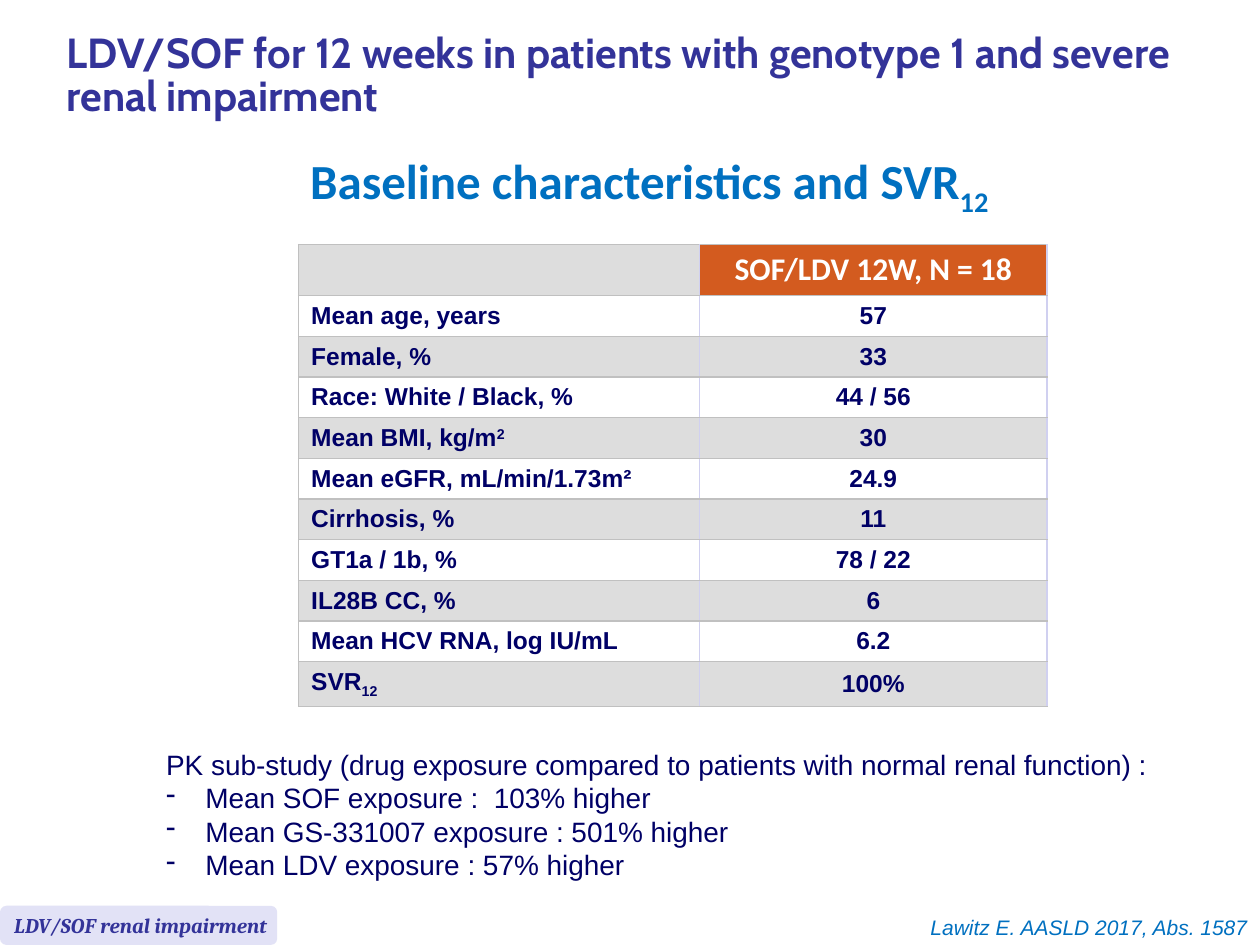
"""Build a slide of baseline characteristics and SVR12 in renal impairment."""
from dataclasses import dataclass, field

import pptx
import pptx.dml.color
import pptx.enum.shapes
import pptx.enum.text
import pptx.oxml
import pptx.oxml.ns
import pptx.util
from pptx.util import Cm

ALIGN = pptx.enum.text.PP_ALIGN
ANCHOR = pptx.enum.text.MSO_ANCHOR
AUTO_SIZE = pptx.enum.text.MSO_AUTO_SIZE
INDENT = Cm(0.79)
NAVY, INDIGO, BLUE = "000066", "333399", "0070C0"
WHITE, GREY, ORANGE, LILAC = "FFFFFF", "DDDDDD", "D35B1F", "E2E2F6"
RULE, SIDE_RULE = "C0C0C0", "D0D0F0"


@dataclass
class Style:
    """Hold the look of a run of text and of its paragraph."""
    size: float
    name: str
    color: str
    font: dict = field(default_factory=dict)
    paragraph: dict = field(default_factory=dict)


@dataclass
class Line:
    """Hold one paragraph, with an optional shifted ending or dash."""
    text: str
    ending: str = ""
    baseline: int = 0
    dashed: bool = False


@dataclass
class TextBox:
    """Hold the place, look and wording of one text box."""
    left: float
    top: float
    width: float
    height: float
    style: Style
    lines: list[Line]


BOLD, ITALIC = {"bold": True}, {"italic": True}
LEFT, CENTER = {"alignment": ALIGN.LEFT}, {"alignment": ALIGN.CENTER}
TITLE = Style(24, "Cabin", INDIGO, BOLD, LEFT | {"line_spacing": 0.85})
HEADING = Style(28, "Calibri", BLUE, BOLD, CENTER | {"line_spacing": pptx.util.Pt(15.2)})
CITATION = Style(12, "Arial", BLUE, ITALIC, {"alignment": ALIGN.RIGHT})
BODY = Style(16, "Arial", NAVY, {}, LEFT)
TAG = Style(12, "Cambria", INDIGO, BOLD | ITALIC, LEFT)
COLUMN_HEAD = Style(18, "Calibri", WHITE, BOLD, CENTER)
LABEL = Style(14, "Arial", NAVY, BOLD, LEFT)
VALUE = Style(14, "Arial", NAVY, BOLD, CENTER)

TEXT_BOXES = [
    TextBox(1.09, 3.73, 24, 0.91, HEADING,
            [Line("Baseline characteristics and SVR", "12", -25)]),
    TextBox(6.71, 18.31, 18.69, 0.76, CITATION,
            [Line("Lawitz E. AASLD 2017, Abs. 1587")]),
    TextBox(3.1, 14.94, 20.8, 3, BODY, [
        Line("PK sub-study (drug exposure compared to patients with normal renal function) :"),
        Line("Mean SOF exposure :  103% higher", dashed=True),
        Line("Mean GS-331007 exposure : 501% higher", dashed=True),
        Line("Mean LDV exposure : 57% higher", dashed=True),
    ]),
]

CHARACTERISTICS = [
    (Line("Mean age, years"), "57"),
    (Line("Female, %"), "33"),
    (Line("Race: White / Black, %"), "44 / 56"),
    (Line("Mean BMI, kg/m", "2", 30), "30"),
    (Line("Mean eGFR, mL/min/1.73m²"), "24.9"),
    (Line("Cirrhosis, %"), "11"),
    (Line("GT1a / 1b, %"), "78 / 22"),
    (Line("IL28B CC, %"), "6"),
    (Line("Mean HCV RNA, log IU/mL"), "6.2"),
    (Line("SVR", "12", -25), "100%"),
]


def rgb(color: str) -> pptx.dml.color.RGBColor:
    """Turn a hex string into a colour."""
    return pptx.dml.color.RGBColor.from_string(color)


def paint(target, color: str) -> None:
    """Fill a shape or a cell with one colour."""
    target.fill.solid()
    target.fill.fore_color.rgb = rgb(color)


def assign(target, values: dict) -> None:
    """Set attributes from a dict of format values."""
    for name, value in values.items():
        setattr(target, name, value)


def add_span(para, text: str, style: Style, baseline: int = 0) -> None:
    """Add a styled run, raised or lowered by a percentage."""
    span = para.add_run()
    span.text = text
    assign(span.font, {"size": pptx.util.Pt(style.size), "name": style.name} | style.font)
    span.font.color.rgb = rgb(style.color)
    if baseline:
        span._r.get_or_add_rPr().set("baseline", str(baseline * 1000))


def add_dash(para) -> None:
    """Give a paragraph a hanging dash."""
    properties = para._p.get_or_add_pPr()
    properties.set("marL", str(INDENT))
    properties.set("indent", str(-INDENT))
    bullet = pptx.oxml.parse_xml(f'<a:buChar {pptx.oxml.ns.nsdecls("a")} char="-"/>')
    properties.append(bullet)


def write(frame, lines: list[Line], style: Style) -> None:
    """Write styled paragraphs into a text frame."""
    for index, line in enumerate(lines):
        para = frame.add_paragraph() if index else frame.paragraphs[0]
        if line.dashed:
            add_dash(para)
        assign(para, style.paragraph)
        add_span(para, line.text, style)
        if line.ending:
            add_span(para, line.ending, style, line.baseline)


def add_text_box(page, item: TextBox) -> None:
    """Draw a wrapping text box that fits its text."""
    box = page.shapes.add_textbox(
        Cm(item.left), Cm(item.top), Cm(item.width), Cm(item.height))
    assign(box.text_frame, {"word_wrap": True, "auto_size": AUTO_SIZE.SHAPE_TO_FIT_TEXT})
    write(box.text_frame, item.lines, item.style)


def set_borders(cell, left_color: str) -> None:
    """Draw thin rules on the four sides of a cell."""
    properties = cell._tc.get_or_add_tcPr()
    sides = {"lnL": left_color, "lnR": SIDE_RULE, "lnT": RULE, "lnB": RULE}
    for index, (side, color) in enumerate(sides.items()):
        properties.insert(index, pptx.oxml.parse_xml(
            f'<a:{side} {pptx.oxml.ns.nsdecls("a")} w="12700"><a:solidFill>'
            f'<a:srgbClr val="{color}"/></a:solidFill></a:{side}>'))


def add_characteristics(page) -> None:
    """Draw the table of baseline characteristics."""
    heights = [1.03] + [0.82] * 9 + [0.9]
    frame = page.shapes.add_table(
        len(heights), 2, Cm(6.02), Cm(4.93), Cm(15.09), Cm(sum(heights)))
    table = frame.table
    for column, width in zip(table.columns, (8.08, 7.01)):
        column.width = Cm(width)
    rows = [(None, Line("SOF/LDV 12W, N = 18"))]
    rows += [(label, Line(value)) for label, value in CHARACTERISTICS]
    for row, (height, lines) in enumerate(zip(heights, rows)):
        table.rows[row].height = Cm(height)
        for column, line in enumerate(lines):
            cell = table.cell(row, column)
            cell.vertical_anchor = ANCHOR.MIDDLE
            is_head = row == 0 and column == 1
            paint(cell, ORANGE if is_head else (GREY, WHITE)[row % 2])
            set_borders(cell, SIDE_RULE if column else RULE)
            if line:
                style = COLUMN_HEAD if is_head else (LABEL, VALUE)[column]
                write(cell.text_frame, [line], style)


def add_tag(page) -> None:
    """Draw the rounded study tag in the bottom corner."""
    tag = page.shapes.add_shape(
        pptx.enum.shapes.MSO_SHAPE.ROUNDED_RECTANGLE, 0, Cm(18.26), Cm(5.59), Cm(0.79))
    tag.shadow.inherit = False
    tag.line.fill.background()
    paint(tag, LILAC)
    assign(tag.text_frame, {"word_wrap": False, "vertical_anchor": ANCHOR.MIDDLE})
    write(tag.text_frame, [Line("LDV/SOF renal impairment")], TAG)


def main() -> None:
    """Build and save the deck."""
    deck = pptx.Presentation()
    assign(deck, {"slide_width": Cm(25.4), "slide_height": Cm(19.05)})
    page = deck.slides.add_slide(deck.slide_layouts[5])
    title = page.shapes.title
    assign(title, {"left": Cm(1.09), "top": Cm(0.2), "width": Cm(24.31), "height": Cm(2.72)})
    assign(title.text_frame, {"vertical_anchor": ANCHOR.MIDDLE, "auto_size": AUTO_SIZE.NONE})
    write(title.text_frame, [Line(
        "LDV/SOF for 12 weeks in patients with genotype 1 and severe renal impairment")], TITLE)
    add_characteristics(page)
    for item in TEXT_BOXES:
        add_text_box(page, item)
    add_tag(page)
    deck.save("out.pptx")


if __name__ == "__main__":
    main()
